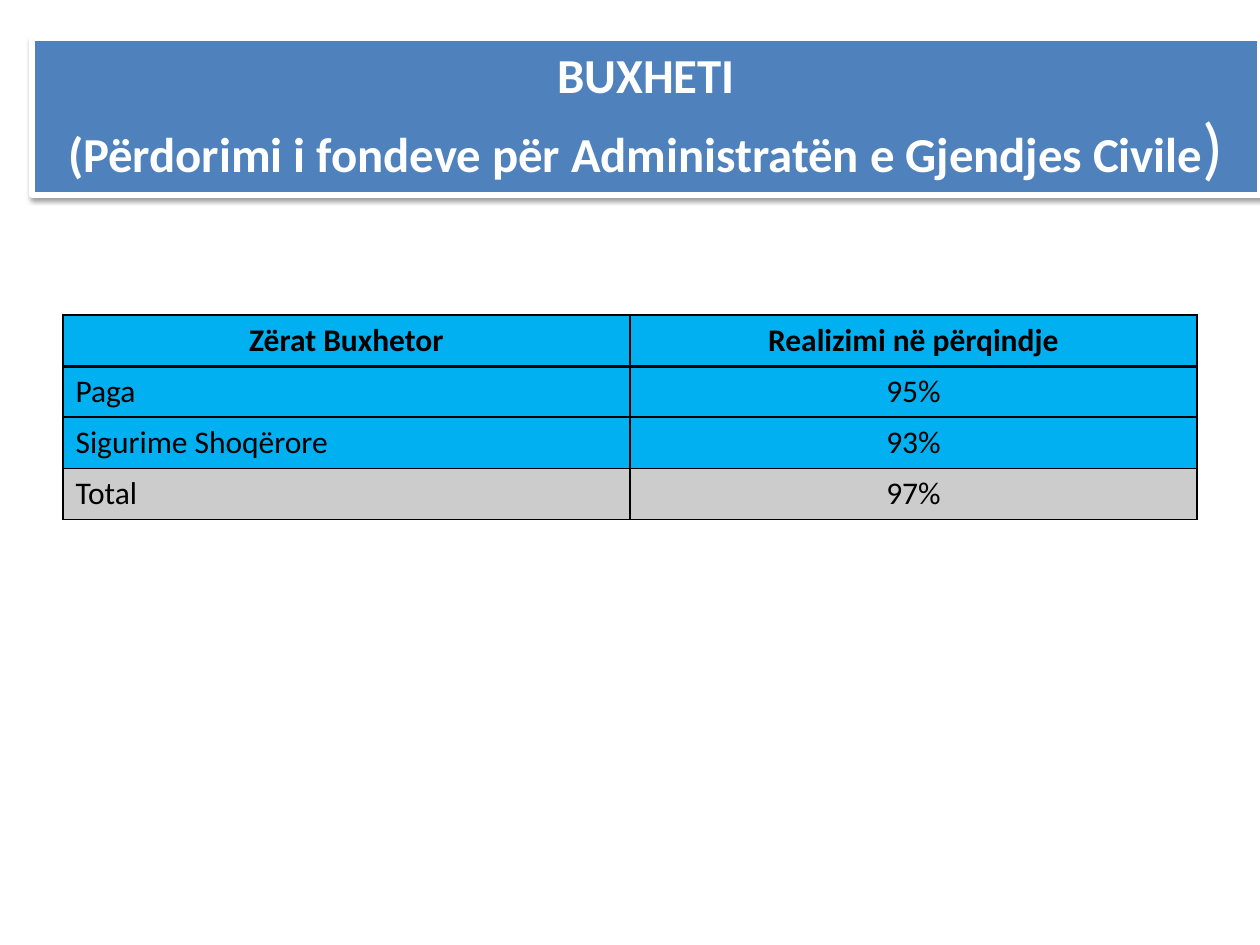
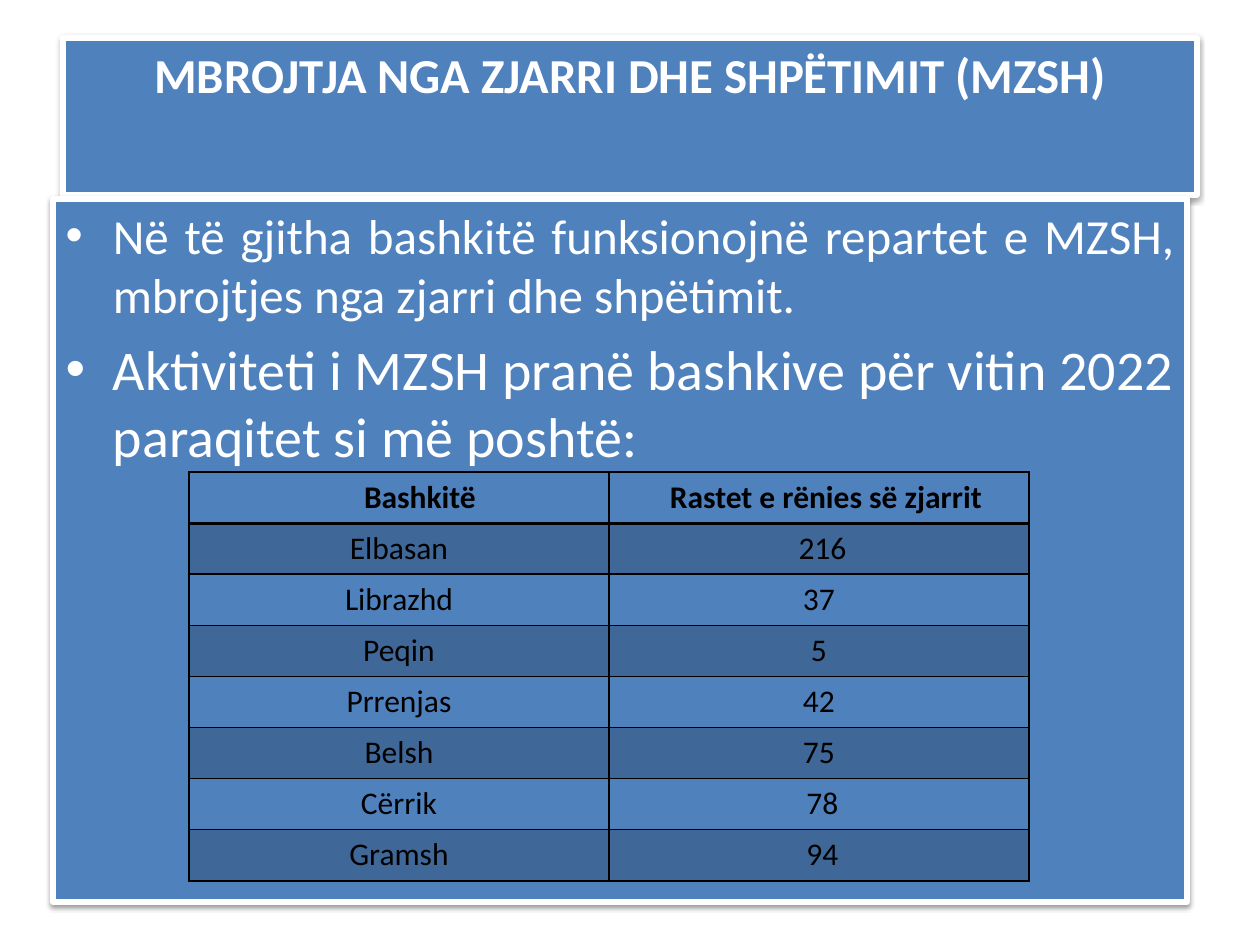
from lxml import etree
from pptx import Presentation
from pptx import util as u
from pptx.dml.color import RGBColor
from pptx.enum import text
from pptx.oxml import ns

FONT = "Calibri"
BLUE, WHITE, BLACK, CYAN = "4F81BD", "FFFFFF", "000000", "00B0F0"
SHADE = "shade"  # black at 20 % opacity
TITLE_PT, CELL_PT = 27.9, 18
ROW_H = 51
CENTER, LEFT = text.PP_ALIGN.CENTER, text.PP_ALIGN.LEFT
TITLE_ONLY, TITLE_AND_BODY = 5, 1

# Title lines are lists of runs: (text, size, bold).
# Table cells are texts or (text, extra left margin in px).
SLIDES = [
    dict(
        layout=TITLE_ONLY,
        title=[
            [("BUXHETI", TITLE_PT, True)],
            [("(Përdorimi i fondeve për Administratën e Gjendjes Civile", TITLE_PT, True),
             (")", 39.6, False)],
        ],
        title_box=(32, 38, 1228, 157),
        table=[
            ("Zërat Buxhetor", "Realizimi në përqindje"),
            ("Paga", "95%"),
            ("Sigurime Shoqërore", "93%"),
            ("Total", "97%"),
        ],
        table_at=(63, 315), col_w=567,
        row_fills=[CYAN, CYAN, CYAN, SHADE],
        label_align=LEFT,
    ),
    dict(
        layout=TITLE_AND_BODY,
        title=[[("MBROJTJA NGA ZJARRI DHE SHPËTIMIT (MZSH)", TITLE_PT, True)]],
        title_box=(63, 38, 1134, 157),
        body=[
            ("Në të gjitha bashkitë funksionojnë repartet e MZSH, "
             "mbrojtjes nga zjarri dhe shpëtimit.", 28),
            ("Aktiviteti i MZSH pranë bashkive për vitin 2022 "
             "paraqitet si më poshtë:", 32),
        ],
        body_box=(53, 199, 1134, 703),
        table=[
            (("Bashkitë", 42), ("Rastet e rënies së zjarrit", 14)),
            ("Elbasan", ("216", 7)),
            ("Librazhd", "37"),
            ("Peqin", "5"),
            ("Prrenjas", "42"),
            ("Belsh", "75"),
            ("Cërrik", ("78", 7)),
            ("Gramsh", ("94", 7)),
        ],
        table_at=(189, 472), col_w=420,
        row_fills=[None, SHADE] * 4,
        label_align=CENTER,
    ),
]


def px(n):
    return u.Emu(round(n * 914400 / 126))


def rgb(color):
    return RGBColor.from_string(color)


def sub(parent, tag, **attrs):
    return etree.SubElement(parent, ns.qn(tag), {k: str(v) for k, v in attrs.items()})


def style_font(font, size, color, bold=False):
    font.name, font.size, font.bold = FONT, u.Pt(size), bold
    font.color.rgb = rgb(color)


def style_panel(sp, box):
    """Blue panel with a white outline and a soft shadow below."""
    sp.left, sp.top, sp.width, sp.height = map(px, box)
    sp.fill.solid()
    sp.fill.fore_color.rgb = rgb(BLUE)
    sp.line.color.rgb = rgb(WHITE)
    sp.line.width = u.Pt(3)
    effects = sub(sp._element.spPr, "a:effectLst")
    shadow = sub(effects, "a:outerShdw", blurRad=u.Pt(3.1), dist=u.Pt(1.6),
                 dir=90 * 60000, rotWithShape=0)
    sub(sub(shadow, "a:srgbClr", val=BLACK), "a:alpha", val=38000)
    tf = sp.text_frame
    tf.word_wrap = True
    tf.auto_size = text.MSO_AUTO_SIZE.NONE
    tf.vertical_anchor = text.MSO_ANCHOR.TOP
    return tf


def add_title(s, lines, box):
    p = style_panel(s.shapes.title, box).paragraphs[0]
    p.alignment = CENTER
    for i, line in enumerate(lines):
        if i:
            p.add_line_break()
        for words, size, bold in line:
            r = p.add_run()
            r.text = words
            style_font(r.font, size, WHITE, bold)


def add_body(s, items, box):
    tf = style_panel(s.placeholders[1], box)
    for i, (words, size) in enumerate(items):
        p = tf.add_paragraph() if i else tf.paragraphs[0]
        p.text = words
        p.alignment = text.PP_ALIGN.JUSTIFY
        style_font(p.font, size, WHITE)


def fill_cell(cell, color):
    if color is None:
        cell.fill.background()
        return
    cell.fill.solid()
    cell.fill.fore_color.rgb = rgb(BLACK if color == SHADE else color)
    if color == SHADE:
        clr = cell._tc.tcPr.find(".//" + ns.qn("a:srgbClr"))
        sub(clr, "a:alpha", val=20000)


def border_cell(cell, row):
    """Black 1 pt borders, 2 pt between the header and the first row."""
    widths = dict(L=1, R=1, T=2 if row == 1 else 1, B=2 if row == 0 else 1)
    tc_pr = cell._tc.get_or_add_tcPr()
    for i, (side, width) in enumerate(widths.items()):
        ln = sub(tc_pr, "a:ln" + side, w=u.Pt(width))
        sub(sub(ln, "a:solidFill"), "a:srgbClr", val=BLACK)
        tc_pr.insert(i, ln)


def add_table(s, rows, at, col_w, row_fills, label_align):
    n_rows, n_cols = len(rows), len(rows[0])
    size = (col_w * n_cols, ROW_H * n_rows)
    table = s.shapes.add_table(n_rows, n_cols, *map(px, at + size)).table
    table.horz_banding = table.first_row = False
    for i, (row, color) in enumerate(zip(rows, row_fills)):
        for j, content in enumerate(row):
            words, indent = content if isinstance(content, tuple) else (content, 0)
            cell = table.cell(i, j)
            cell.text = words
            if indent:
                cell.margin_left = u.Inches(0.1) + px(indent)
            p = cell.text_frame.paragraphs[0]
            p.alignment = label_align if i and j == 0 else CENTER
            style_font(p.font, CELL_PT, BLACK, bold=i == 0)
            fill_cell(cell, color)
            border_cell(cell, i)


def main():
    prs = Presentation()
    prs.slide_width, prs.slide_height = px(1260), px(945)
    for d in SLIDES:
        s = prs.slides.add_slide(prs.slide_layouts[d["layout"]])
        add_title(s, d["title"], d["title_box"])
        if "body" in d:
            add_body(s, d["body"], d["body_box"])
        add_table(s, d["table"], d["table_at"], d["col_w"], d["row_fills"], d["label_align"])
    prs.save("out.pptx")


if __name__ == "__main__":
    main()
